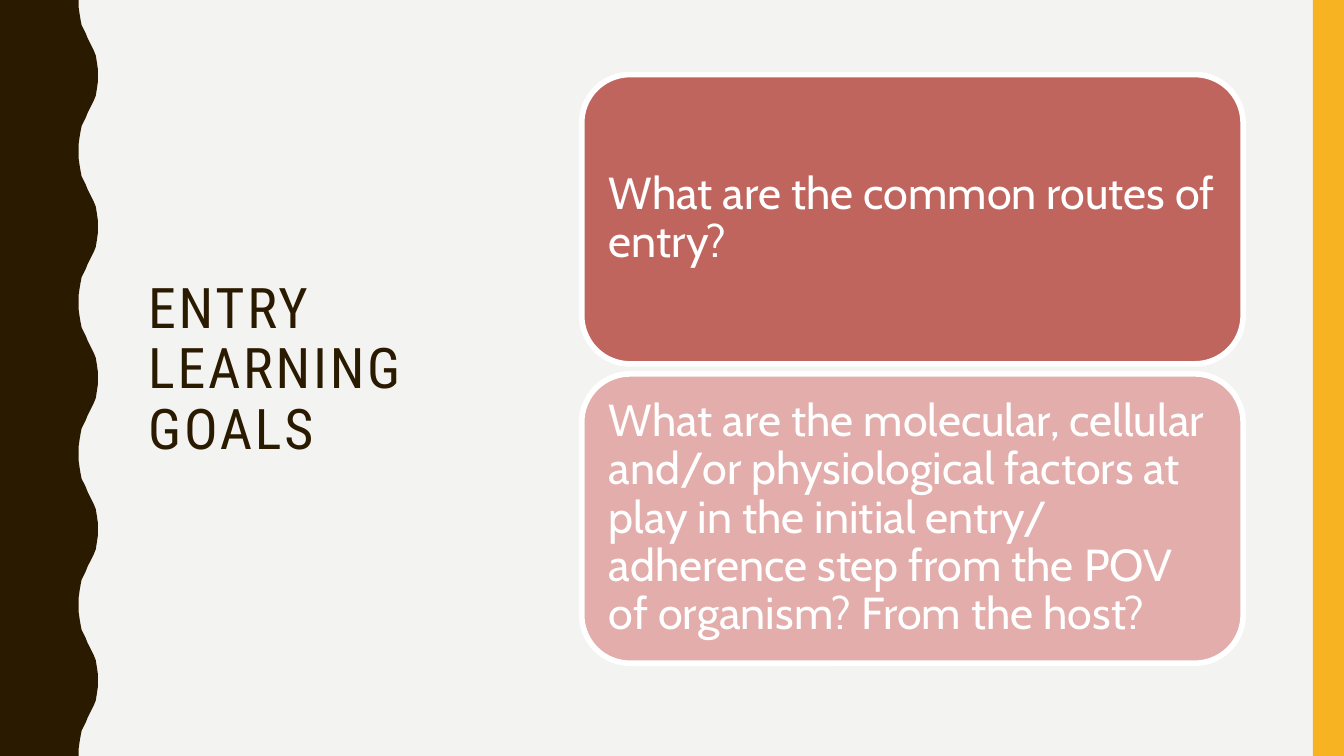
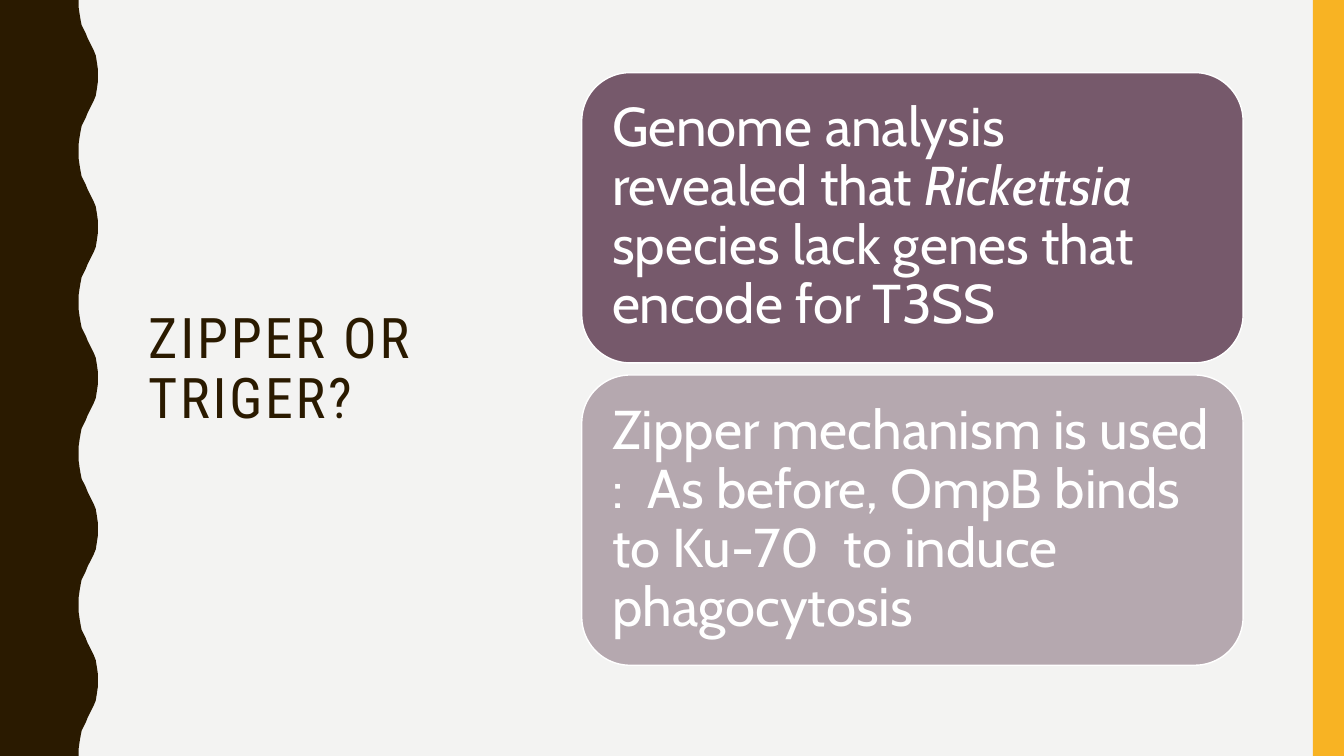
"""Build two infection-biology slides with a shared wavy frame and stacked cards."""
from dataclasses import dataclass

from pptx import Presentation
from pptx.dml.color import RGBColor
from pptx.enum.shapes import MSO_SHAPE
from pptx.enum.text import MSO_ANCHOR, MSO_AUTO_SIZE, PP_ALIGN
from pptx.util import Inches, Pt


@dataclass(frozen=True)
class Theme:
    paper: str = "F3F3F2"
    brown: str = "2A1A00"
    amber: str = "F8B323"
    white: str = "FFFFFF"
    title_font: str = "Roboto Condensed"
    body_font: str = "Cabin"
    title_size: int = 40
    title_tracking: int = 200
    line_spacing: float = 0.9


THEME = Theme()
SLIDE_W, SLIDE_H = 13.33, 7.5
TITLE_BOX = (1.37, 0.71, 3.7, 5.93)
STRIPE_W = 0.31
CARD_LEFT, CARD_W = 5.77, 6.56
CARDS_MIDDLE = 3.66

HALF_WAVE = [
    (0.78, 0), (0.78, 0.07), (0.79, 0.14), (0.8, 0.2), (0.81, 0.25), (0.83, 0.29),
    (0.85, 0.33), (0.87, 0.38), (0.89, 0.42), (0.91, 0.46), (0.93, 0.5),
    (0.95, 0.55), (0.96, 0.61), (0.97, 0.68), (0.97, 0.75),
]
WAVE_PERIOD = 1.5
WAVE_COUNT = 5

SLIDES = [
    {
        "title": "ENTRY LEARNING GOALS",
        "size": 32, "inset": 0.13, "border": 4, "height": 2.87, "gap": 0.1,
        "cards": [
            ("BF655E", [("What are the common routes of entry?", False)]),
            ("E2ADAA", [("What are the molecular, cellular and/or physiological factors "
                         "at play in the initial entry/ adherence step from the POV of "
                         "organism? From the host?", False)]),
        ],
    },
    {
        "title": "ZIPPER OR TRIGER?",
        "size": 39, "inset": 0.16, "border": 1, "height": 2.88, "gap": 0.12,
        "cards": [
            ("76596B", [("Genome analysis revealed that ", False),
                        ("Rickettsia ", True),
                        ("species lack genes that encode for T3SS", False)]),
            ("B5A8AF", [("Zipper mechanism is used :  As before, OmpB binds to Ku-70  "
                         "to induce phagocytosis", False)]),
        ],
    },
]


def paint(shape, color):
    shape.shadow.inherit = False
    shape.fill.solid()
    shape.fill.fore_color.rgb = RGBColor.from_string(color)


def style_font(font, name, size, color):
    font.name = name
    font.size = Pt(size)
    font.color.rgb = RGBColor.from_string(color)


def draw_frame(slide, master):
    """Draw the wave and stripe, then move them to the master for every slide."""
    crest_to_trough = [(x, WAVE_PERIOD - y) for x, y in HALF_WAVE[-2::-1]]
    period = HALF_WAVE + crest_to_trough
    edge = [(x, y + i * WAVE_PERIOD) for i in range(WAVE_COUNT) for x, y in period]
    outline = slide.shapes.build_freeform(0, 0)
    outline.add_line_segments(
        [(Inches(x), Inches(y)) for x, y in edge + [(0, SLIDE_H)]], close=True)
    wave = outline.convert_to_shape()
    stripe = slide.shapes.add_shape(
        MSO_SHAPE.RECTANGLE, Inches(SLIDE_W - STRIPE_W), 0,
        Inches(STRIPE_W), Inches(SLIDE_H))
    for position, (part, color) in enumerate(((wave, THEME.brown), (stripe, THEME.amber))):
        paint(part, color)
        part.line.fill.background()
        part.element.xpath("./p:nvSpPr/p:cNvPr")[0].set("id", str(101 + position))
        master.shapes.element.insert(2 + position, part.element)


def set_title(slide, text):
    title = slide.shapes.title
    title.left, title.top, title.width, title.height = map(Inches, TITLE_BOX)
    frame = title.text_frame
    frame.text = text
    frame.word_wrap = True
    frame.auto_size = MSO_AUTO_SIZE.NONE
    frame.vertical_anchor = MSO_ANCHOR.MIDDLE
    paragraph = frame.paragraphs[0]
    paragraph.alignment = PP_ALIGN.LEFT
    paragraph.line_spacing = THEME.line_spacing
    run = paragraph.runs[0]
    style_font(run.font, THEME.title_font, THEME.title_size, THEME.brown)
    run._r.get_or_add_rPr().set("spc", str(THEME.title_tracking))


def add_card(slide, top, content, color, phrases):
    card = slide.shapes.add_shape(
        MSO_SHAPE.ROUNDED_RECTANGLE, Inches(CARD_LEFT), Inches(top),
        Inches(CARD_W), Inches(content["height"]))
    paint(card, color)
    card.line.color.rgb = RGBColor.from_string(THEME.white)
    card.line.width = Pt(content["border"])
    frame = card.text_frame
    frame.word_wrap = True
    frame.vertical_anchor = MSO_ANCHOR.MIDDLE
    inset = Inches(content["inset"])
    frame.margin_left = frame.margin_right = inset
    frame.margin_top = frame.margin_bottom = inset
    paragraph = frame.paragraphs[0]
    paragraph.alignment = PP_ALIGN.LEFT
    paragraph.line_spacing = THEME.line_spacing
    for text, italic in phrases:
        run = paragraph.add_run()
        run.text = text
        run.font.italic = italic
        style_font(run.font, THEME.body_font, content["size"], THEME.white)


def add_cards(slide, content):
    count, height, gap = len(content["cards"]), content["height"], content["gap"]
    first_top = CARDS_MIDDLE - (count * height + (count - 1) * gap) / 2
    for i, (color, phrases) in enumerate(content["cards"]):
        add_card(slide, first_top + i * (height + gap), content, color, phrases)


def main():
    deck = Presentation()
    deck.slide_width, deck.slide_height = Inches(SLIDE_W), Inches(SLIDE_H)
    master = deck.slide_master
    master.background.fill.solid()
    master.background.fill.fore_color.rgb = RGBColor.from_string(THEME.paper)
    title_only = deck.slide_layouts.get_by_name("Title Only")
    for i, content in enumerate(SLIDES):
        slide = deck.slides.add_slide(title_only)
        if i == 0:
            draw_frame(slide, master)
        set_title(slide, content["title"])
        add_cards(slide, content)
    deck.save("out.pptx")


if __name__ == "__main__":
    main()
